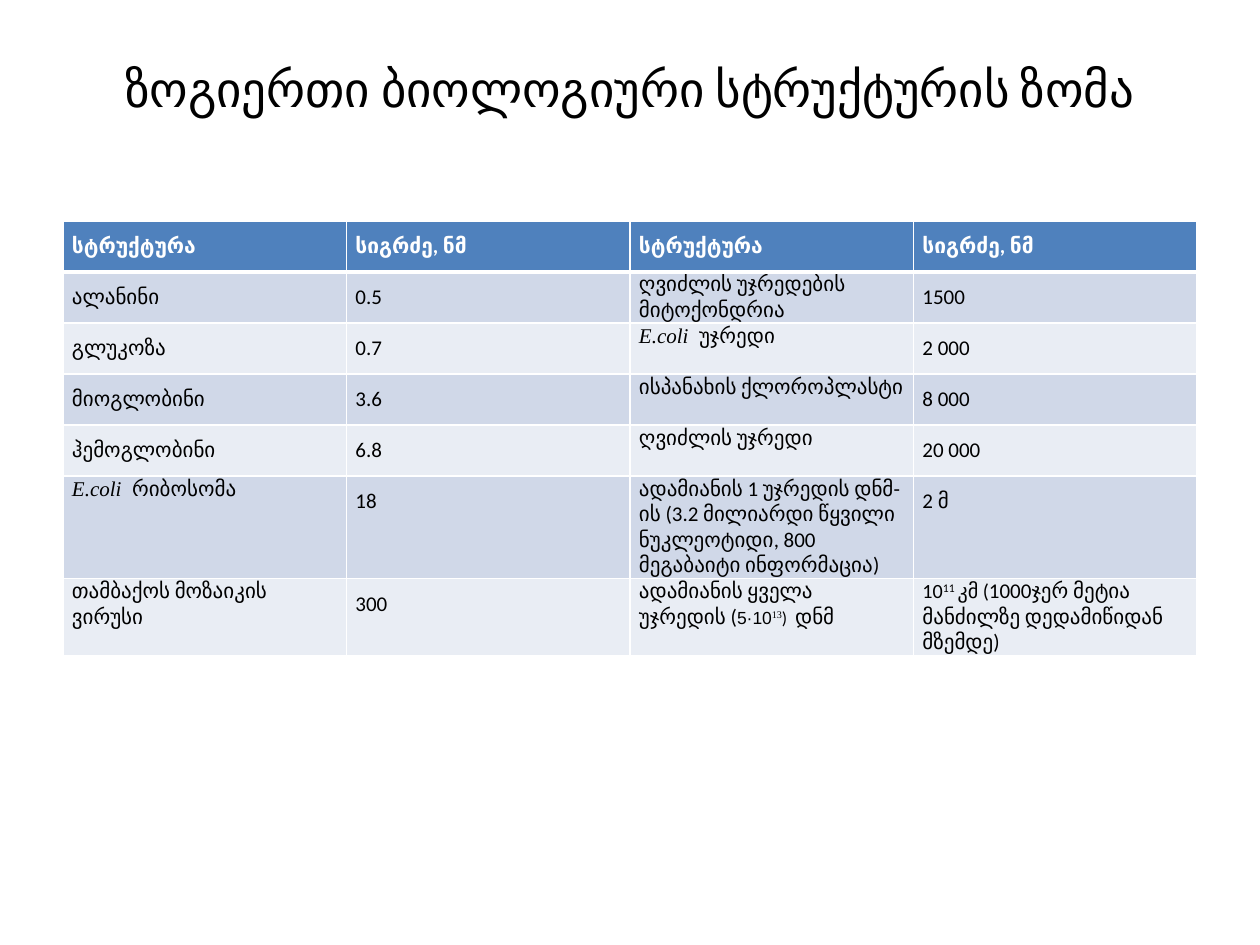
import pptx
import pptx.util
import pptx.dml.color
import pptx.enum.text
import pptx.oxml
import pptx.oxml.ns

SCALE = 914400 / 126
THEME = {
    "font": "Calibri", "serif": "Times New Roman", "sans": "Arial",
    "title": 28, "body": 12, "mid": 11.5, "small": 10,
    "black": "000000", "white": "FFFFFF", "head": "4F81BD",
    "bands": ("D0D8E8", "E9EDF4"), "line": 1, "rule": 3,
}
LATIN = {"name": THEME["serif"], "italic": True}
SMALL = {"size": THEME["small"]}
MID = {"size": THEME["mid"]}
HEAD = ["სტრუქტურა", "სიგრძე, ნმ"] * 2
ROWS = [
    ["ალანინი", "0.5", "ღვიძლის უჯრედების მიტოქონდრია", "1500"],
    ["გლუკოზა", "0.7", [("E.coli  ", LATIN), ("უჯრედი", {})], "2 000"],
    ["მიოგლობინი", "3.6", "ისპანახის ქლოროპლასტი", "8 000"],
    ["ჰემოგლობინი", "6.8", "ღვიძლის უჯრედი", "20 000"],
    [[("E.coli  ", LATIN), ("რიბოსომა", {})], "18",
     "ადამიანის 1 უჯრედის დნმ-ის (3.2 მილიარდი წყვილი ნუკლეოტიდი, 800 მეგაბაიტი ინფორმაცია)",
     "2 მ"],
    ["თამბაქოს მოზაიკის ვირუსი", "300",
     [("ადამიანის ყველა უჯრედის (", {}),
      ("5·10", {**SMALL, "name": THEME["sans"]}),
      ("13", {**SMALL, "name": THEME["serif"], "base": 30}),
      (")  ", SMALL), ("დნმ", {})],
     [("10", MID), ("11 ", {**MID, "base": 30}), ("კმ (", MID),
      ("1000ჯერ მეტია მანძილზე დედამიწიდან მზემდე)", {})]],
]
TIGHT = {(5, 0), (6, 0), (6, 3)} | {(row, 2) for row in range(1, 7)}


def px(num):
    return pptx.util.Emu(round(num * SCALE))


def apply(item, vals):
    for key, val in vals.items():
        setattr(item, key, val)


def place(shape, left, top, width, height):
    apply(shape, {"left": px(left), "top": px(top),
                  "width": px(width), "height": px(height)})


def tint(hue):
    return pptx.dml.color.RGBColor.from_string(hue)


def write(para, parts, base):
    for text, style in parts:
        vals = {**base, **style}
        lift = vals.pop("base", 0)
        hue = vals.pop("hue")
        vals["size"] = pptx.util.Pt(vals["size"])
        run = para.add_run()
        run.text = text
        apply(run.font, vals)
        run.font.color.rgb = tint(hue)
        if lift:
            run.font._element.set("baseline", str(lift * 1000))


def edge(cell, sides):
    props = cell._tc.get_or_add_tcPr()
    for spot, (side, width) in enumerate(sides.items()):
        line = pptx.oxml.parse_xml(
            f'<a:ln{side} {pptx.oxml.ns.nsdecls("a")} w="{pptx.util.Pt(width)}">'
            f'<a:solidFill><a:srgbClr val="{THEME["white"]}"/></a:solidFill></a:ln{side}>')
        props.insert(spot, line)


def fill(cell, row, col, text):
    top = row == 0
    apply(cell, {"margin_left": px(9), "margin_right": px(9),
                 "margin_top": 0, "margin_bottom": 0})
    cell.fill.solid()
    cell.fill.fore_color.rgb = tint(THEME["head"] if top else THEME["bands"][(row - 1) % 2])
    thin, thick = THEME["line"], THEME["rule"]
    edge(cell, {"L": thin, "R": thin, "T": thick if row == 1 else thin,
                "B": thick if top else thin})
    para = cell.text_frame.paragraphs[0]
    para.line_spacing = 1.0 if (row, col) in TIGHT else 1.5
    parts = [(text, {})] if isinstance(text, str) else text
    write(para, parts, {"name": THEME["font"], "size": THEME["body"], "bold": top,
                        "italic": False, "hue": THEME["white" if top else "black"]})


def title(slide, text):
    shape = slide.shapes.title
    place(shape, 63, 38, 1134, 158)
    frame = shape.text_frame
    apply(frame, {"word_wrap": True, "margin_bottom": px(65),
                  "vertical_anchor": pptx.enum.text.MSO_ANCHOR.MIDDLE})
    para = frame.paragraphs[0]
    para.alignment = pptx.enum.text.PP_ALIGN.CENTER
    write(para, [(text, {})], {"name": THEME["font"], "size": THEME["title"],
                               "hue": THEME["black"]})


def table(slide, rows):
    shape = slide.shapes.add_table(len(rows), len(HEAD), 0, 0, px(1134), px(432))
    grid = shape.table
    for line in grid.rows:
        line.height = px(51)
    for row, texts in enumerate(rows):
        for col, text in enumerate(texts):
            fill(grid.cell(row, col), row, col, text)
    place(shape, 63, 221, 1134, 432)


def main():
    deck = pptx.Presentation()
    apply(deck, {"slide_width": px(1260), "slide_height": px(945)})
    slide = deck.slides.add_slide(deck.slide_layouts[5])
    title(slide, "ზოგიერთი ბიოლოგიური სტრუქტურის ზომა")
    table(slide, [HEAD] + ROWS)
    deck.save("out.pptx")


if __name__ == "__main__":
    main()
